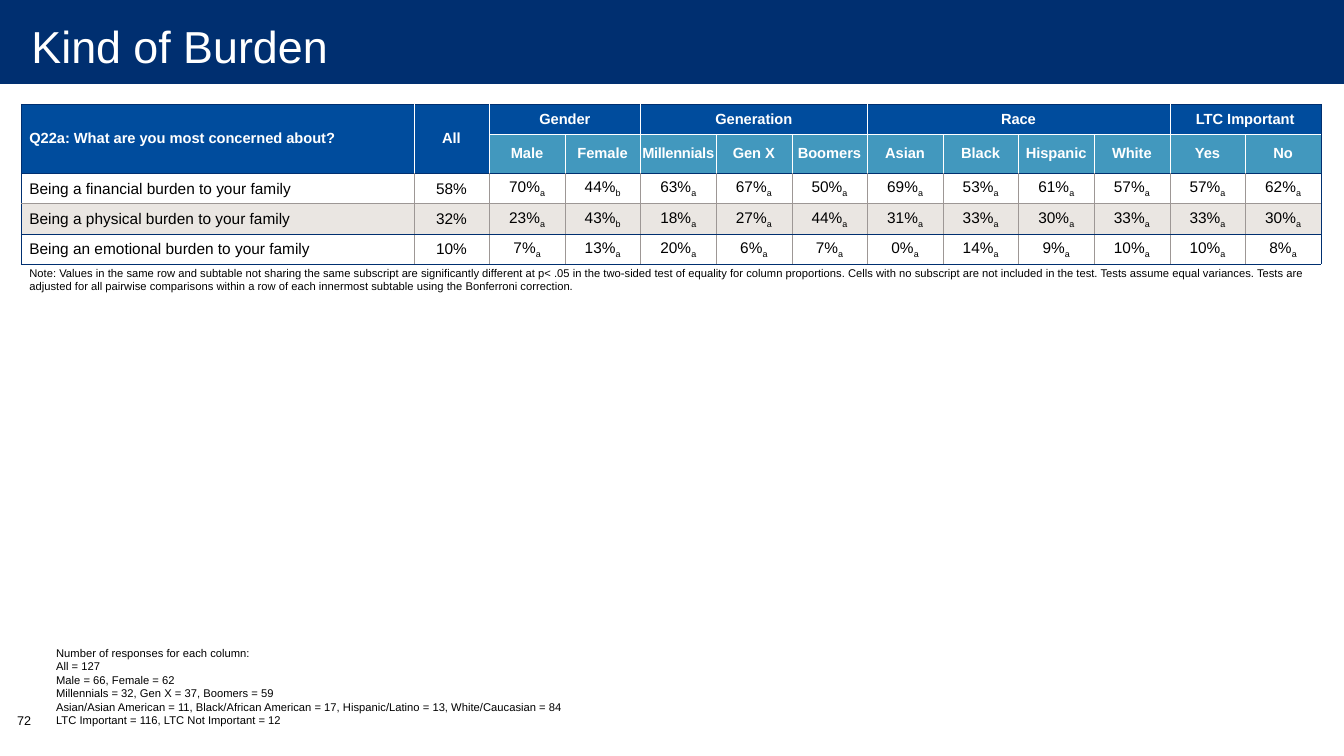
from dataclasses import dataclass

from lxml.etree import SubElement
from pptx import Presentation
from pptx.dml.color import RGBColor
from pptx.enum.shapes import MSO_SHAPE as Shape
from pptx.enum.text import MSO_ANCHOR as Anchor, MSO_AUTO_SIZE as AutoSize, PP_ALIGN as Align
from pptx.oxml.ns import qn
from pptx.util import Pt

PX = 9525  # EMU per px, 96 px to the inch


@dataclass(frozen=True)
class Theme:
    font: str = "Arial"
    navy: str = "002F70"
    blue: str = "004C9D"
    sky: str = "4298BE"
    sand: str = "EAE6E2"
    grey: str = "9D9795"
    white: str = "FFFFFF"
    black: str = "000000"
    title: float = 32
    body: float = 11
    header: float = 10.5
    page: float = 9
    small: float = 8


theme = Theme()


def write(paragraph, text, size, color, align=Align.LEFT, bold=False):
    """Add a formatted run to the paragraph and return it."""
    paragraph.alignment = align
    run = paragraph.add_run()
    run.text = text
    font_values = {"name": theme.font, "size": Pt(size), "bold": bold}
    for attribute, value in font_values.items():
        setattr(run.font, attribute, value)
    run.font.color.rgb = RGBColor.from_string(color)
    return run


def style_cell(cell, insets, fill, borders):
    """Set insets (left, top, right, bottom), border colours by side, then the fill."""
    sides = ("margin_left", "margin_top", "margin_right", "margin_bottom")
    for attribute, inset in zip(sides, insets):
        setattr(cell, attribute, inset * PX)
    cell.vertical_anchor = Anchor.MIDDLE
    properties = cell._tc.get_or_add_tcPr()
    for side in "LRTB":
        line = SubElement(properties, qn(f"a:ln{side}"), w=str(Pt(0.25)))
        if borders.get(side):
            solid = SubElement(line, qn("a:solidFill"))
            SubElement(solid, qn("a:srgbClr"), val=borders[side])
        else:
            SubElement(line, qn("a:noFill"))
    if fill:
        cell.fill.solid()
        cell.fill.fore_color.rgb = RGBColor.from_string(fill)
    else:
        cell.fill.background()


deck = Presentation()
deck.slide_width, deck.slide_height = 1280 * PX, 720 * PX
slide = deck.slides.add_slide(deck.slide_layouts[5])

# Title on its banner
title = slide.shapes.title
title_values = {"left": 1, "top": -3, "width": 1280, "height": 93}
for attribute, value in title_values.items():
    setattr(title, attribute, value * PX)
heading = title.text_frame
heading_values = {
    "margin_left": 29 * PX, "margin_top": 0, "margin_right": 19 * PX, "margin_bottom": 0,
    "vertical_anchor": Anchor.MIDDLE, "word_wrap": True, "auto_size": AutoSize.NONE,
}
for attribute, value in heading_values.items():
    setattr(heading, attribute, value)
write(heading.paragraphs[0], "Kind of Burden", theme.title, theme.white)

banner = slide.shapes.add_shape(Shape.RECTANGLE, 0, -3 * PX, 1280 * PX, 83 * PX)
banner.shadow.inherit = False
banner.fill.solid()
banner.fill.fore_color.rgb = RGBColor.from_string(theme.navy)
banner.line.fill.background()
title.element.addprevious(banner.element)

# Response counts and page number
responses = [
    "Number of responses for each column:",
    "All = 127",
    "Male = 66, Female = 62",
    "Millennials = 32, Gen X = 37, Boomers = 59",
    "Asian/Asian American = 11, Black/African American = 17, Hispanic/Latino = 13, White/Caucasian = 84",
    "LTC Important = 116, LTC Not Important = 12",
]
footers = [
    ((44, 611, 562, 86), responses, theme.small, Anchor.BOTTOM),
    ((7, 674, 47, 38), ["72"], theme.page, Anchor.TOP),
]
for place, lines, size, anchor in footers:
    footer = slide.shapes.add_textbox(*(length * PX for length in place)).text_frame
    footer.word_wrap = True
    footer.vertical_anchor = anchor
    for number, text in enumerate(lines):
        paragraph = footer.add_paragraph() if number else footer.paragraphs[0]
        write(paragraph, text, size, theme.black)

# Survey table
question = "Q22a: What are you most concerned about?"
groups = {
    "Gender": ["Male", "Female"],
    "Generation": ["Millennials", "Gen X", "Boomers"],
    "Race": ["Asian", "Black", "Hispanic", "White"],
    "LTC Important": ["Yes", "No"],
}
answers = {
    "Being a financial burden to your family": "58% 70%a 44%b 63%a 67%a 50%a 69%a 53%a 61%a 57%a 57%a 62%a",
    "Being a physical burden to your family": "32% 23%a 43%b 18%a 27%a 44%a 31%a 33%a 30%a 33%a 33%a 30%a",
    "Being an emotional burden to your family": "10% 7%a 13%a 20%a 6%a 7%a 0%a 14%a 9%a 10%a 10%a 8%a",
}
note = (
    "Note: Values in the same row and subtable not sharing the same subscript are significantly "
    "different at p< .05 in the two-sided test of equality for column proportions. Cells with no "
    "subscript are not included in the test. Tests assume equal variances. Tests are adjusted for "
    "all pairwise comparisons within a row of each innermost subtable using the Bonferroni correction."
)
row_count, column_count, row_height = 6, 13, 29
column_widths = [374] + [72] * (column_count - 1)
table = slide.shapes.add_table(
    row_count, column_count, 20 * PX, 99 * PX, sum(column_widths) * PX, row_count * row_height * PX
).table
table.first_row = table.horz_banding = False
for column, width in zip(table.columns, column_widths):
    column.width = width * PX
for row in table.rows:
    row.height = row_height * PX

# Merged cells and header wording
headers = {(0, 0): question, (0, 1): "All"}
for column in (0, 1):
    table.cell(0, column).merge(table.cell(1, column))
first = 2
for group, members in groups.items():
    table.cell(0, first).merge(table.cell(0, first + len(members) - 1))
    headers[0, first] = group
    for offset, member in enumerate(members):
        headers[1, first + offset] = member
    first += len(members)
table.cell(5, 0).merge(table.cell(5, column_count - 1))

# Fills and borders; horizontal edges run from the table's top to its bottom
edges = [theme.navy, theme.white, theme.navy, theme.grey, theme.navy, theme.navy, None]
fills = [theme.blue, theme.sky, None, theme.sand, None, None]
for r in range(row_count):
    inner = theme.white if r < 2 else theme.grey
    for c in range(column_count):
        cell = table.cell(r, c)
        if cell.is_spanned:
            continue
        borders = {"T": edges[r], "B": edges[r + cell.span_height]}
        if r < 5:
            borders["L"] = inner if c else theme.navy
            borders["R"] = inner if c + cell.span_width < column_count else theme.navy
        if r < 2:
            insets = (0, 0, 0, 0) if c else (8, 10, 5, 10)
        else:
            insets = (1 if c else 8, 1, 1, 0)
        style_cell(cell, insets, fills[r], borders)

# Cell wording
for (r, c), text in headers.items():
    paragraph = table.cell(r, c).text_frame.paragraphs[0]
    align = Align.CENTER if c else Align.LEFT
    run = write(paragraph, text, theme.header, theme.white, align, bold=True)
    if text == "Millennials":
        run._r.get_or_add_rPr().set("spc", "-20")
for r, (answer, shares) in enumerate(answers.items(), start=2):
    write(table.cell(r, 0).text_frame.paragraphs[0], answer, theme.body, theme.black)
    for c, share in enumerate(shares.split(), start=1):
        paragraph = table.cell(r, c).text_frame.paragraphs[0]
        percent, sign, subscript = share.partition("%")
        write(paragraph, percent + sign, theme.body, theme.black, Align.CENTER)
        if subscript:
            run = write(paragraph, subscript, theme.body, theme.black, Align.CENTER)
            run._r.get_or_add_rPr().set("baseline", "-25000")
write(table.cell(5, 0).text_frame.paragraphs[0], note, theme.small, theme.black)

deck.save("out.pptx")
